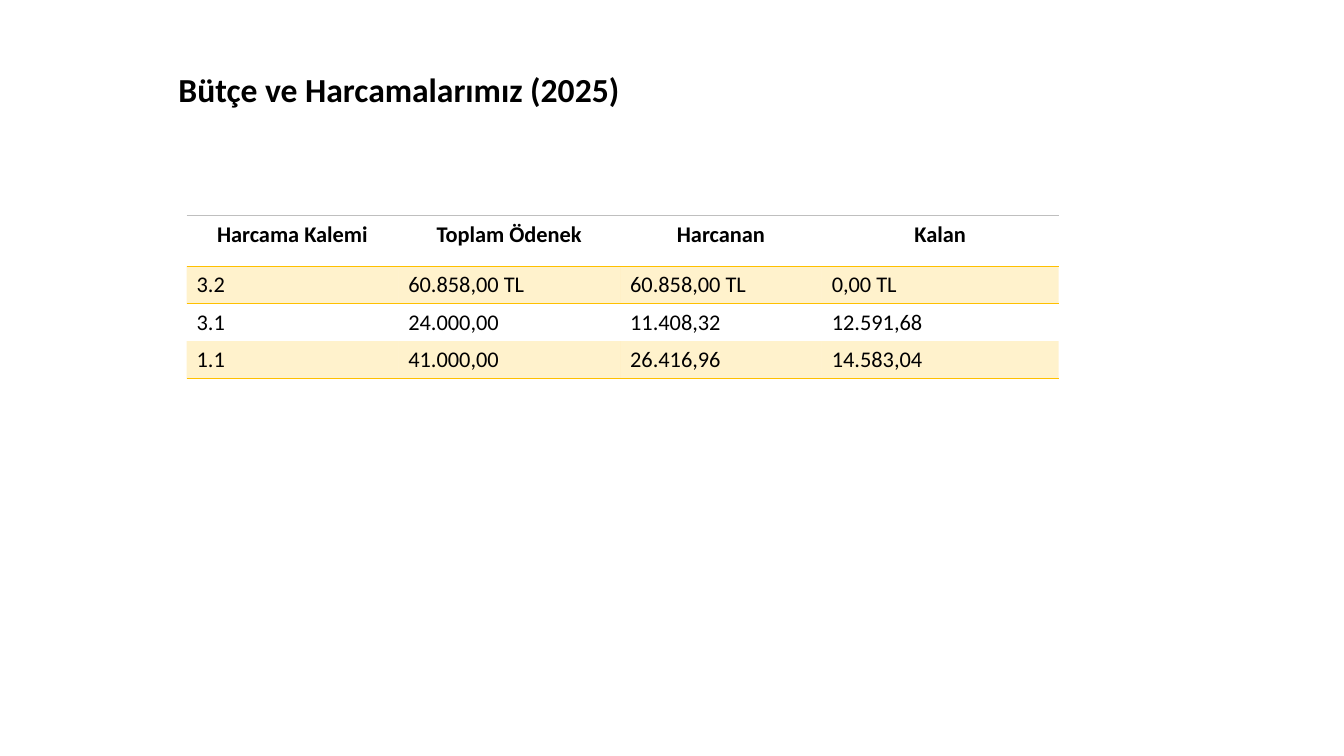
from pptx import Presentation
from pptx.dml.color import RGBColor
from pptx.enum.text import MSO_ANCHOR, PP_ALIGN
from pptx.oxml.ns import qn
from pptx.util import Inches, Pt
from lxml import etree

CENTER, LEFT = PP_ALIGN.CENTER, PP_ALIGN.LEFT
MIDDLE = MSO_ANCHOR.MIDDLE
TITLE_ONLY = 5
PLAIN_TABLE = "{2D5ABB26-0587-4C30-8999-92F81FD0307C}"

FONT = "Calibri"
BLACK, GOLD, GREY = "000000", "FFC000", "BFBFBF"
BAND_OPACITY = 20

COLUMN_WIDTHS = [2.1, 2.2, 2, 2.35]
ROW_HEIGHTS = [0.5, 0.37, 0.37, 0.37]
BUDGET = [
    ["Harcama Kalemi", "Toplam Ödenek", "Harcanan", "Kalan"],
    ["3.2", "60.858,00 TL", "60.858,00 TL", "0,00 TL"],
    ["3.1", "24.000,00", "11.408,32", "12.591,68"],
    ["1.1", "41.000,00", "26.416,96", "14.583,04"],
]


def color(value):
    return RGBColor.from_string(value)


def add_span(para, text, size, bold):
    span = para.add_run()
    span.text = text
    span.font.name = FONT
    span.font.size = Pt(size)
    span.font.bold = bold
    span.font.color.rgb = color(BLACK)


def add_border(cell, side, value, width):
    properties = cell._tc.get_or_add_tcPr()
    line = etree.SubElement(properties, qn(f"a:ln{side}"), w=str(Pt(width)))
    fill = etree.SubElement(line, qn("a:solidFill"))
    etree.SubElement(fill, qn("a:srgbClr"), val=value)


def fill_band(cell):
    cell.fill.solid()
    cell.fill.fore_color.rgb = color(GOLD)
    tint = cell._tc.tcPr.find(f".//{qn('a:solidFill')}[last()]")
    tint = cell._tc.tcPr.find(f"{qn('a:solidFill')}/{qn('a:srgbClr')}")
    etree.SubElement(tint, qn("a:alpha"), val=str(BAND_OPACITY * 1000))


def add_title(page, left, top, width, height):
    box = page.shapes.title
    box.left, box.top = Inches(left), Inches(top)
    box.width, box.height = Inches(width), Inches(height)
    box.text_frame.vertical_anchor = MIDDLE
    para = box.text_frame.paragraphs[0]
    para.alignment = LEFT
    para.line_spacing = 0.9
    add_span(para, "Bütçe ve Harcamalarımız (2025)", 24, True)


def add_budget_table(page, left, top, width, height):
    frame = page.shapes.add_table(len(BUDGET), len(BUDGET[0]), Inches(left),
                                  Inches(top), Inches(width), Inches(height))
    table = frame.table
    table.horz_banding = False
    table._tbl.tblPr.find(qn("a:tableStyleId")).text = PLAIN_TABLE
    for column, column_width in zip(table.columns, COLUMN_WIDTHS):
        column.width = Inches(column_width)

    for row_index, values in enumerate(BUDGET):
        table.rows[row_index].height = Inches(ROW_HEIGHTS[row_index])
        is_header = row_index == 0
        for column_index, value in enumerate(values):
            cell = table.cell(row_index, column_index)
            para = cell.text_frame.paragraphs[0]
            para.alignment = CENTER if is_header else LEFT
            add_span(para, value, 16, is_header)

            # Rules around the header and below the last row
            if is_header:
                add_border(cell, "T", GREY, 0.75)
            if row_index == 1:
                add_border(cell, "T", GOLD, 1)
            if is_header or row_index == len(BUDGET) - 1:
                add_border(cell, "B", GOLD, 1)

            # Every other row is tinted
            if row_index % 2:
                fill_band(cell)
            else:
                cell.fill.background()


def main():
    deck = Presentation()
    deck.slide_width, deck.slide_height = Inches(13.33), Inches(7.5)
    page = deck.slides.add_slide(deck.slide_layouts[TITLE_ONLY])
    add_title(page, 1.67, 0.4, 8.08, 1.02)
    add_budget_table(page, 1.85, 2.14, sum(COLUMN_WIDTHS), sum(ROW_HEIGHTS))
    deck.save("out.pptx")


if __name__ == "__main__":
    main()
